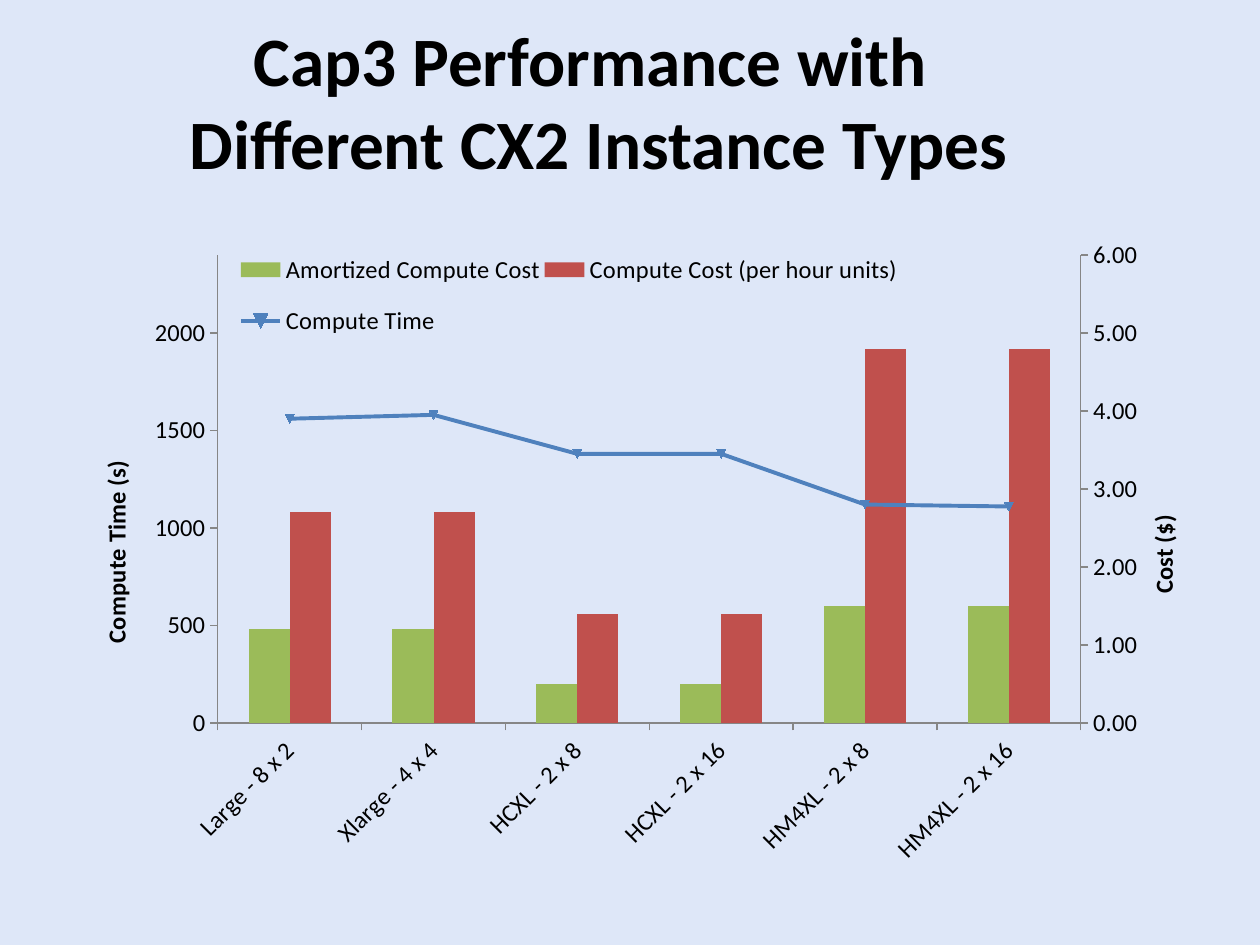
from copy import deepcopy

from pptx import Presentation
from pptx import util as u
from pptx.chart.data import CategoryChartData
from pptx.dml.color import RGBColor
from pptx.enum import chart as ch, text
from pptx.oxml import parse_xml
from pptx.oxml.ns import nsdecls, qn

BLACK, GREY = "000000", "868686"


def rgb(value):
    return RGBColor.from_string(value)


def layout(x, y, w=None, h=None, inner=False):
    parts = ['<c:layoutTarget val="inner"/>'] if inner else []
    parts += ['<c:xMode val="edge"/>', '<c:yMode val="edge"/>']
    parts += [f'<c:{tag} val="{v}"/>' for tag, v in zip("xywh", (x, y, w, h)) if v is not None]
    return parse_xml(f'<c:layout {nsdecls("c")}><c:manualLayout>{"".join(parts)}'
                     '</c:manualLayout></c:layout>')


def set_layout(parent, after, new):
    for old in parent.findall(qn("c:layout")):
        parent.remove(old)
    if after:
        parent.find(qn(after)).addnext(new)
    else:
        parent.insert(0, new)


class Deck:
    """Slide style, current slide and one method per kind of element."""

    def __init__(self, width, height, font, background):
        self.prs = Presentation()
        self.prs.slide_width, self.prs.slide_height = u.Inches(width), u.Inches(height)
        self.font = font
        self.s = self.prs.slides.add_slide(self.prs.slide_layouts[6])
        self.s.background.fill.solid()
        self.s.background.fill.fore_color.rgb = rgb(background)

    def box(self, x, y, w, h):
        sw, sh = self.prs.slide_width, self.prs.slide_height
        return int(x * sw), int(y * sh), int(w * sw), int(h * sh)

    def style(self, font, size, bold=False):
        font.name, font.size, font.bold = self.font, u.Pt(size), bold
        font.color.rgb = rgb(BLACK)

    def title(self, words, area, size):
        tf = self.s.shapes.add_textbox(*self.box(*area)).text_frame
        tf.word_wrap = True
        tf.vertical_anchor = text.MSO_ANCHOR.MIDDLE
        p = tf.paragraphs[0]
        p.text = words
        p.alignment = text.PP_ALIGN.CENTER
        self.style(p.font, size, True)

    def chart(self, categories, series, area, size):
        data = CategoryChartData(number_format="General")
        data.categories = categories
        for name, values, _ in series:
            data.add_series(name, values)
        chart = self.s.shapes.add_chart(
            ch.XL_CHART_TYPE.COLUMN_CLUSTERED, *self.box(*area), data).chart
        self.style(chart.font, size)
        chart.has_title = False
        chart.plots[0].gap_width, chart.plots[0].overlap = 150, 0
        chart.plots[0].vary_by_categories = False
        for column, (_, _, color) in zip(chart.plots[0].series, series):
            column.format.fill.solid()
            column.format.fill.fore_color.rgb = rgb(color)
        return chart

    def axis(self, axis, low, high, step, number_format):
        axis.minimum_scale, axis.maximum_scale, axis.major_unit = low, high, step
        axis.has_major_gridlines = False
        axis.tick_labels.number_format = number_format
        axis.tick_labels.number_format_is_linked = False
        axis.format.line.color.rgb = rgb(GREY)

    def axis_title(self, axis, words, x, y, size):
        tf = axis.axis_title.text_frame
        tf.text = words
        self.style(tf.paragraphs[0].font, size, True)
        body = axis.axis_title._element.find(".//" + qn("a:bodyPr"))
        body.set("rot", "-5400000")
        body.set("vert", "horz")
        set_layout(axis.axis_title._element, "c:tx", layout(x, y))

    def line_on_second_axis(self, chart, color):
        area = chart._chartSpace.chart.plotArea
        bar = area.find(qn("c:barChart"))
        ser = bar.findall(qn("c:ser"))[-1]
        for tag in ("c:invertIfNegative", "c:spPr"):
            for child in ser.findall(qn(tag)):
                ser.remove(child)
        line = parse_xml(f'<c:lineChart {nsdecls("c")}><c:grouping val="standard"/>'
                         '<c:varyColors val="0"/><c:marker val="1"/>'
                         '<c:axId val="501"/><c:axId val="502"/></c:lineChart>')
        line.insert(2, ser)
        bar.addnext(line)
        first = area.find(qn("c:valAx"))
        cat, val = deepcopy(area.find(qn("c:catAx"))), deepcopy(first)
        for ax, own, other in ((cat, "501", "502"), (val, "502", "501")):
            ax.find(qn("c:axId")).set("val", own)
            ax.find(qn("c:crossAx")).set("val", other)
        cat.find(qn("c:delete")).set("val", "1")
        first.addnext(val)
        val.addnext(cat)
        first.find(qn("c:axPos")).set("val", "r")
        first.find(qn("c:crosses")).set("val", "max")
        plotted = chart.plots[1].series[0]
        plotted.smooth = False
        plotted.format.line.color.rgb = rgb(color)
        plotted.format.line.width = u.Pt(2.25)
        plotted.marker.size = 5
        plotted.marker.format.fill.solid()
        plotted.marker.format.fill.fore_color.rgb = rgb(color)
        return chart.value_axis

    def legend(self, chart, size, place):
        chart.has_legend = True
        chart.legend.position = ch.XL_LEGEND_POSITION.RIGHT
        chart.legend.include_in_layout = True
        self.style(chart.legend.font, size)
        set_layout(chart.legend._element, "c:legendPos", layout(*place))


def main():
    deck = Deck(10, 7.5, "Calibri", "DEE7F8")
    deck.title("Cap3 Performance with \vDifferent CX2 Instance Types",
               (0.025, 0.023, 0.9, 0.167), 39.6)
    series = [
        ("Amortized Compute Cost", (1.2, 1.2, 0.5, 0.5, 1.5, 1.5), "9BBB59"),
        ("Compute Cost (per hour units)", (2.7, 2.7, 1.4, 1.4, 4.8, 4.8), "C0504D"),
        ("Compute Time", (1560, 1580, 1380, 1380, 1120, 1110), "4F81BD"),
    ]
    types = ["Large - 8 x 2", "Xlarge - 4 x 4", "HCXL - 2 x 8",
             "HCXL - 2 x 16", "HM4XL - 2 x 8", "HM4XL - 2 x 16"]
    chart = deck.chart(types, series, (0.075, 0.233, 0.867, 0.723), 14)
    chart.category_axis.format.line.color.rgb = rgb(GREY)
    chart.category_axis.tick_labels.font.size = u.Pt(14)
    labels = chart.category_axis._element.find(qn("c:txPr"))
    labels.find(qn("a:bodyPr")).set("rot", "-2700000")

    cost_axis = chart.value_axis
    time_axis = deck.line_on_second_axis(chart, series[-1][2])
    deck.axis(cost_axis, 0, 6, 1, "#,##0.00")
    deck.axis(time_axis, 0, 2400, 500, "0")
    deck.axis_title(cost_axis, "Cost ($)", 0.96, 0.425, 14)
    deck.axis_title(time_axis, "Compute Time (s)", 0, 0.345, 14)
    deck.legend(chart, 14, (0.13, 0.02, 0.61, 0.18))
    set_layout(chart._chartSpace.chart.plotArea, None,
               layout(0.113, 0.051, 0.791, 0.685, inner=True))
    deck.prs.save("out.pptx")


if __name__ == "__main__":
    main()
